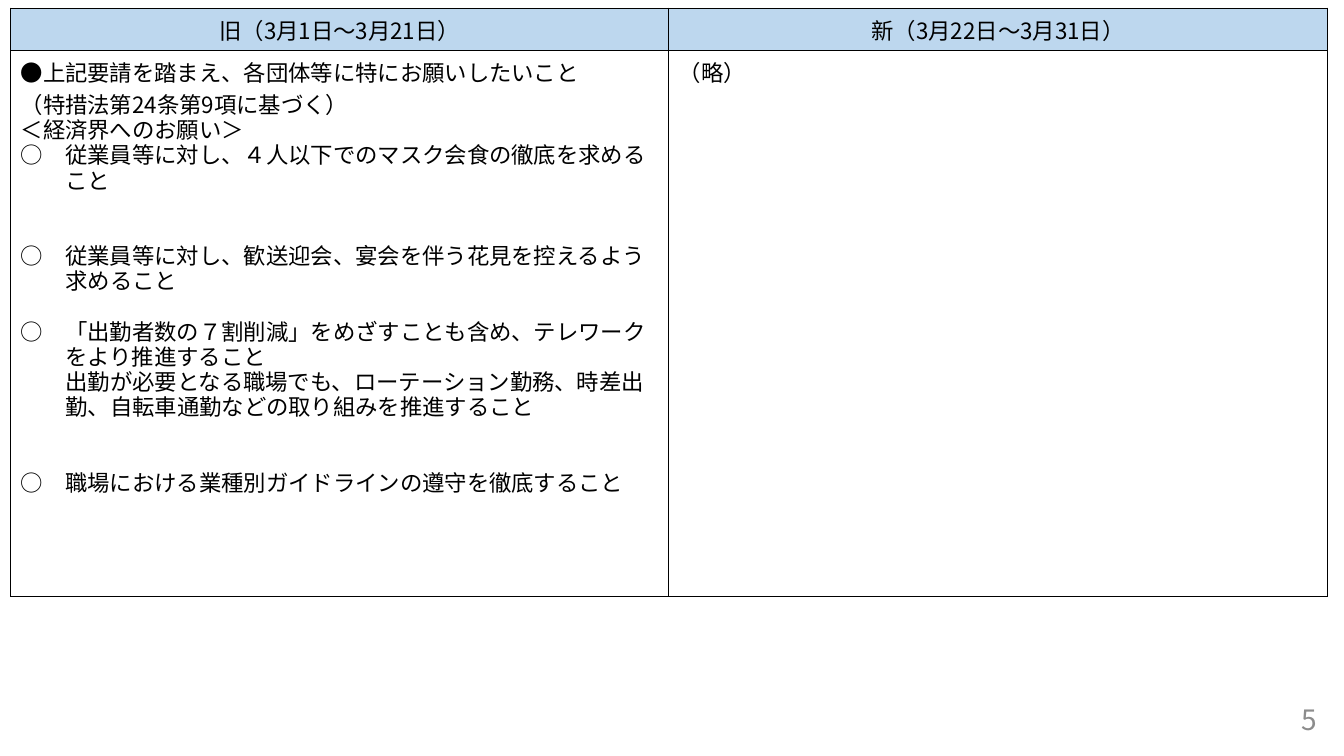
import lxml.etree
import pptx
import pptx.dml.color
import pptx.enum.text
import pptx.oxml.ns
import pptx.util

Pt = pptx.util.Pt
qn = pptx.oxml.ns.qn
ALIGN = pptx.enum.text.PP_ALIGN

COLORS = {"ink": "000000", "header": "BDD7EE", "paper": "FFFFFF", "page": "8C8C8C"}
FONT = "Noto Sans CJK JP"
HANG = 32  # two full-width characters at 16 pt

LEAD = {"line_spacing": Pt(23)}
BODY = {"line_spacing": Pt(18)}
CENTERED = {"alignment": ALIGN.CENTER}

HEADINGS = ["旧（3月1日～3月21日）", "新（3月22日～3月31日）"]

# Each entry: text, paragraph format, left margin, first-line indent.
OLD_REQUESTS = [
    ("●上記要請を踏まえ、各団体等に特にお願いしたいこと", LEAD, 0, 0),
    ("（特措法第24条第9項に基づく）", LEAD, 0, 0),
    ("＜経済界へのお願い＞", BODY, 0, 0),
    ("○　従業員等に対し、４人以下でのマスク会食の徹底を求める\vこと", BODY, HANG, -HANG),
    ("○　従業員等に対し、歓送迎会、宴会を伴う花見を控えるよう\v求めること",
     BODY | {"space_before": Pt(36)}, HANG, -HANG),
    ("○　「出勤者数の７割削減」をめざすことも含め、テレワーク\vをより推進すること",
     BODY | {"space_before": Pt(18)}, HANG, -HANG),
    ("出勤が必要となる職場でも、ローテーション勤務、時差出\v"
     "勤、自転車通勤などの取り組みを推進すること", BODY, HANG, 0),
    ("○　職場における業種別ガイドラインの遵守を徹底すること",
     BODY | {"space_before": Pt(36)}, HANG, -HANG),
]
NEW_REQUESTS = [("（略）", LEAD, 0, 0)]


class SlideBuilder:
    def __init__(self, slide):
        self.slide = slide

    def color(self, name):
        return pptx.dml.color.RGBColor.from_string(COLORS[name])

    def fill_text(self, text_frame, entries, size=16, color="ink"):
        """Fill a text frame with one paragraph per entry."""
        for index, (text, layout, margin, indent) in enumerate(entries):
            paragraph = text_frame.add_paragraph() if index else text_frame.paragraphs[0]
            paragraph.text = text
            for name, value in layout.items():
                setattr(paragraph, name, value)
            if margin:
                properties = paragraph._p.get_or_add_pPr()
                properties.set("marL", str(Pt(margin)))
                properties.set("indent", str(Pt(indent)))
            for run in paragraph.runs:
                for name, value in {"name": FONT, "size": Pt(size), "bold": False}.items():
                    setattr(run.font, name, value)
                run.font.color.rgb = self.color(color)
                east_asian = lxml.etree.SubElement(run._r.get_or_add_rPr(), qn("a:ea"))
                east_asian.set("typeface", FONT)

    def style_cell(self, cell, fill):
        properties = cell._tc.get_or_add_tcPr()
        for side in ("lnL", "lnR", "lnT", "lnB"):
            border = lxml.etree.SubElement(properties, qn(f"a:{side}"), w=str(Pt(1)))
            solid = lxml.etree.SubElement(border, qn("a:solidFill"))
            lxml.etree.SubElement(solid, qn("a:srgbClr"), val=COLORS["ink"])
        cell.fill.solid()
        cell.fill.fore_color.rgb = self.color(fill)

    def table(self, left, top, column_width, row_heights, rows, fills):
        columns = len(rows[0])
        frame = self.slide.shapes.add_table(
            len(rows), columns, Pt(left), Pt(top),
            Pt(column_width * columns), Pt(sum(row_heights)))
        table = frame.table
        table.first_row = table.horz_banding = False
        for column in table.columns:
            column.width = Pt(column_width)
        for row_index, (height, row, fill) in enumerate(zip(row_heights, rows, fills)):
            table.rows[row_index].height = Pt(height)
            for column_index, entries in enumerate(row):
                cell = table.cell(row_index, column_index)
                self.style_cell(cell, fill)
                self.fill_text(cell.text_frame, entries)

    def page_number(self, left, top, width, height, number):
        text_frame = self.slide.shapes.add_textbox(
            Pt(left), Pt(top), Pt(width), Pt(height)).text_frame
        text_frame.word_wrap = True
        text_frame.vertical_anchor = pptx.enum.text.MSO_ANCHOR.MIDDLE
        self.fill_text(text_frame, [(number, {"alignment": ALIGN.RIGHT}, 0, 0)], 20, "page")


def main():
    presentation = pptx.Presentation()
    presentation.slide_width, presentation.slide_height = Pt(960), Pt(540)
    builder = SlideBuilder(presentation.slides.add_slide(presentation.slide_layouts[6]))
    headings = [[(heading, CENTERED, 0, 0)] for heading in HEADINGS]
    builder.table(7.6, 5.8, 470.2, [27.4, 389.8],
                  [headings, [OLD_REQUESTS, NEW_REQUESTS]], ["header", "paper"])
    builder.page_number(732.2, 499.7, 216, 28.8, "5")
    presentation.save("out.pptx")


if __name__ == "__main__":
    main()
